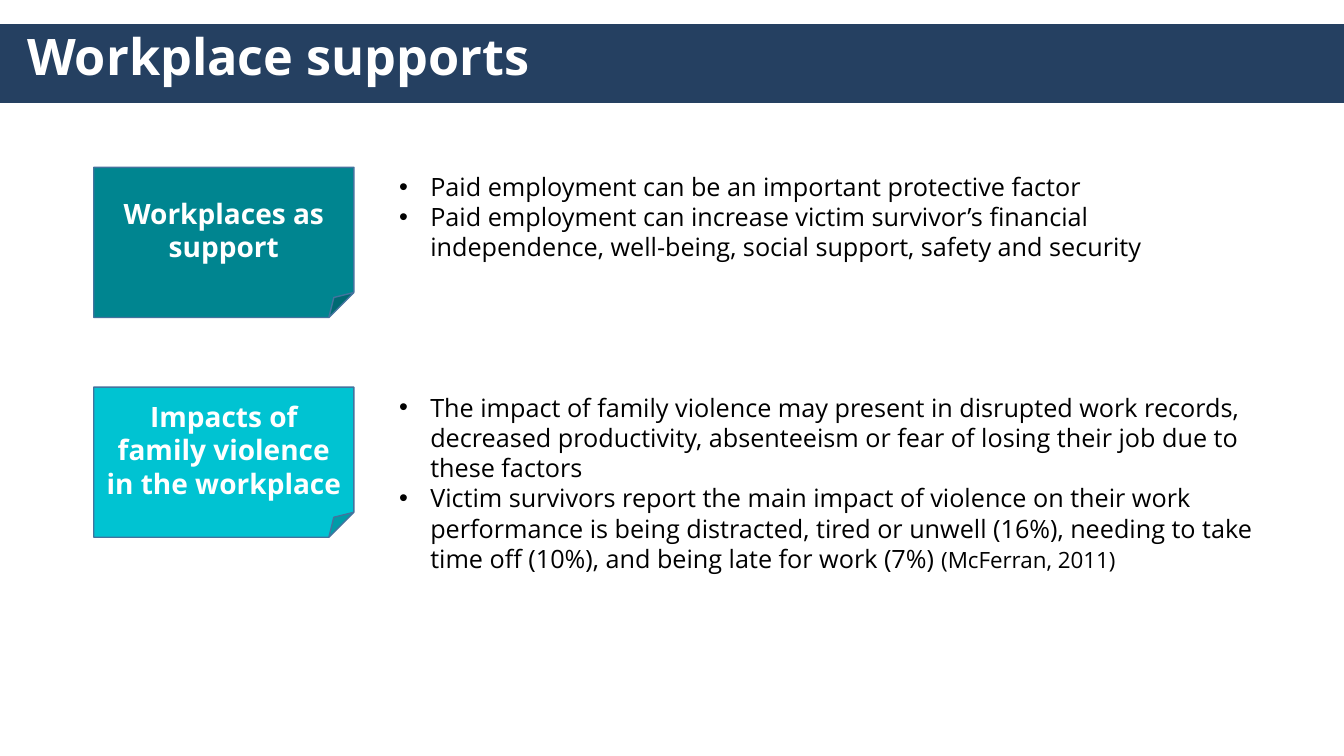
from lxml.etree import SubElement
from pptx import Presentation
from pptx.dml.color import RGBColor
from pptx.enum.shapes import MSO_SHAPE as Shape
from pptx.enum.text import MSO_ANCHOR as Anchor, MSO_AUTO_SIZE as AutoSize, PP_ALIGN as Align
from pptx.oxml.ns import qn
from pptx.util import Inches, Pt

NAVY = RGBColor(0x25, 0x40, 0x61)
TEAL = RGBColor(0x00, 0x85, 0x90)
CYAN = RGBColor(0x00, 0xC3, 0xD2)
OUTLINE = RGBColor(0x43, 0x73, 0x9E)
WHITE = RGBColor(0xFF, 0xFF, 0xFF)
BLACK = RGBColor(0, 0, 0)
FONT = "Open Sans"
SLIDE_WIDTH, SLIDE_HEIGHT = 13.33, 7.5

# Each topic: top, card colour, space before the card text, heading,
# points top, width and height, points as lists of (text, size)
TOPICS = [
    (1.66, TEAL, 0, "Workplaces as support", 1.65, 8.7, 1.01, [
        [("Paid employment can be an important protective factor", 18)],
        [("Paid employment can increase victim survivor’s financial independence, "
          "well-being, social support, safety and security", 18)],
    ]),
    (3.84, CYAN, 12, "Impacts of family violence in the workplace", 3.84, 9.14, 1.92, [
        [("The impact of family violence may present in disrupted work records, "
          "decreased productivity, absenteeism or fear of losing their job due to "
          "these factors", 18)],
        [("Victim survivors report the main impact of violence on their work "
          "performance is being distracted, tired or unwell (16%), needing to take "
          "time off (10%), and being late for work (7%) ", 18),
         ("(McFerran, 2011)", 16)],
    ]),
]


def style_font(font, size, color, bold=False):
    font.name, font.size, font.bold = FONT, Pt(size), bold
    font.color.rgb = color


def add_panel(slide, kind, left, top, width, height, fill, line):
    panel = slide.shapes.add_shape(
        kind, Inches(left), Inches(top), Inches(width), Inches(height))
    panel.shadow.inherit = False
    panel.fill.solid()
    panel.fill.fore_color.rgb = fill
    panel.line.color.rgb = line
    panel.line.width = Pt(1)
    return panel


def add_header(slide, top, height):
    # The band lies behind the title
    band = add_panel(slide, Shape.RECTANGLE, 0, top, SLIDE_WIDTH, height, NAVY, NAVY)
    title = slide.shapes.title
    title.element.addprevious(band.element)
    title.left, title.top = Inches(0.17), Inches(top - 0.04)
    title.width, title.height = Inches(12.83), Inches(1.45)
    frame = title.text_frame
    frame.auto_size = AutoSize.NONE
    frame.vertical_anchor = Anchor.TOP
    frame.margin_top = Inches(0.11)
    heading = frame.paragraphs[0]
    heading.text = "Workplace supports"
    heading.alignment = Align.LEFT
    heading.line_spacing = 0.9
    style_font(heading.font, 36, WHITE, bold=True)


def add_card(slide, left, top, width, height, fill, space_before, text):
    card = add_panel(slide, Shape.FOLDED_CORNER, left, top, width, height, fill, OUTLINE)
    card.text_frame.vertical_anchor = Anchor.MIDDLE
    heading = card.text_frame.paragraphs[0]
    heading.text = text
    heading.alignment = Align.CENTER
    heading.space_before = Pt(space_before)
    style_font(heading.font, 20, WHITE, bold=True)


def add_points(slide, left, top, width, height, points):
    frame = slide.shapes.add_textbox(
        Inches(left), Inches(top), Inches(width), Inches(height)).text_frame
    frame.word_wrap = True
    frame.auto_size = AutoSize.SHAPE_TO_FIT_TEXT
    for index, parts in enumerate(points):
        point = frame.add_paragraph() if index else frame.paragraphs[0]
        style_font(point.font, parts[0][1], BLACK)
        for text, size in parts:
            run = point.add_run()
            run.text = text
            style_font(run.font, size, BLACK)
        # Hanging bullet
        properties = point._p.get_or_add_pPr()
        properties.set("marL", str(Inches(0.31)))
        properties.set("indent", str(-Inches(0.31)))
        bullet_font = properties.makeelement(qn("a:buFont"), {"typeface": "Arial"})
        properties.insert(0, bullet_font)
        bullet = SubElement(properties, qn("a:buChar"), char="•")
        bullet_font.addnext(bullet)


def main():
    prs = Presentation()
    prs.slide_width, prs.slide_height = Inches(SLIDE_WIDTH), Inches(SLIDE_HEIGHT)
    slide = prs.slides.add_slide(prs.slide_layouts[5])
    add_header(slide, 0.25, 0.77)
    for top, fill, space_before, heading, points_top, width, height, points in TOPICS:
        add_card(slide, 0.93, top, 2.58, 1.49, fill, space_before, heading)
        add_points(slide, 3.86, points_top, width, height, points)
    prs.save("out.pptx")


if __name__ == "__main__":
    main()
